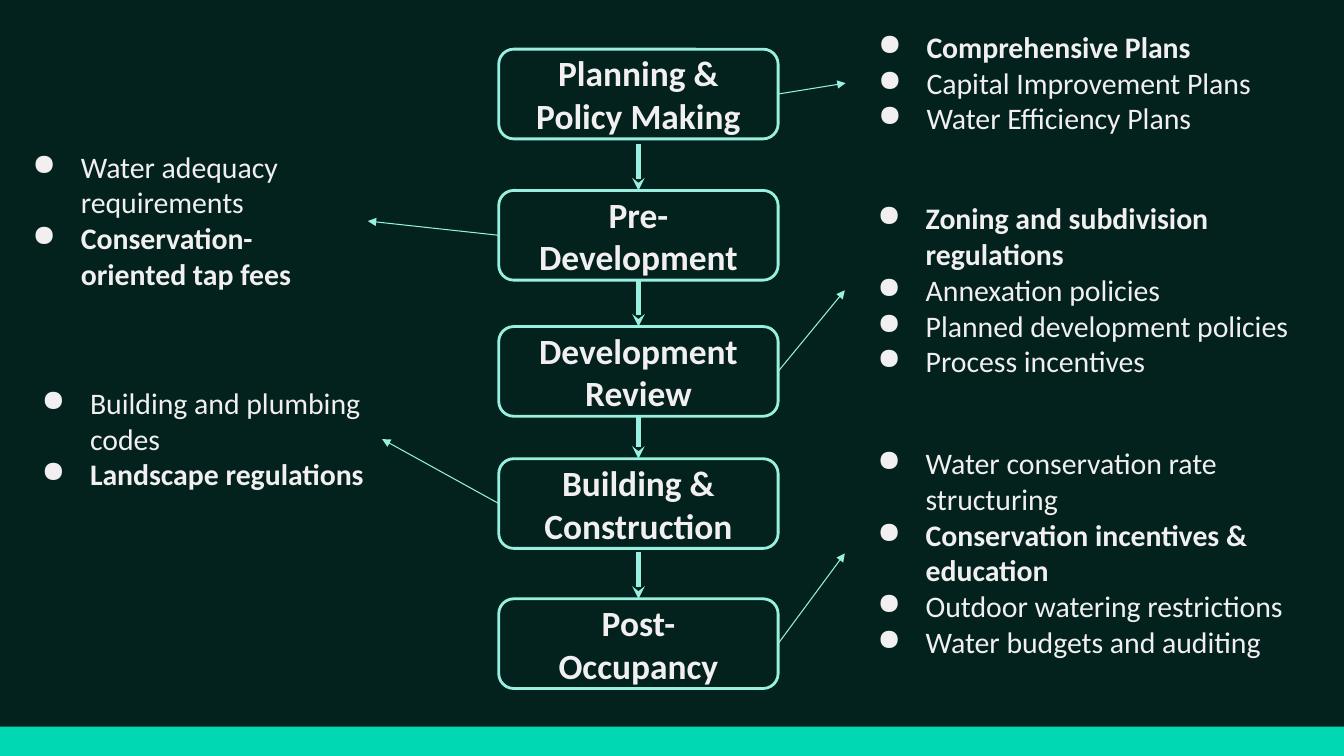
from lxml.etree import SubElement
from pptx import Presentation
from pptx.dml.color import RGBColor
from pptx.enum.shapes import MSO_CONNECTOR, MSO_SHAPE
from pptx.enum.text import MSO_ANCHOR, PP_ALIGN
from pptx.oxml.ns import qn
from pptx.util import Cm, Pt

BACKGROUND, BAR, OUTLINE, TEXT = "03221D", "00D8B4", "99F0E1", "F1EFF0"
SLIDE_WIDTH, SLIDE_HEIGHT, BAR_HEIGHT = 33.87, 19.05, 0.74
STAGE_LEFT, STAGE_WIDTH, STAGE_HEIGHT = 12.57, 7.04, 2.26
TOP, LEFT, BOTTOM, RIGHT = range(4)

# Stage: top, paragraphs, gap between its lower edge and the arrow below
STAGES = [
    (1.24, ["Planning & Policy Making"], 0.13),
    (4.80, ["Pre-", "Development"], 0),
    (8.23, ["Development Review"], 0),
    (11.56, ["Building & Construction"], 0.08),
    (15.09, ["Post-", "Occupancy"], 0),
]

# Measures of each stage: box (left, top, width, height), items (text, bold)
MEASURES = [
    ((21.31, 0.38, 11.66, 3.43), [
        ("Comprehensive Plans", True),
        ("Capital Improvement Plans", False),
        ("Water Efficiency Plans", False)]),
    ((0, 3.40, 9.27, 4.34), [
        ("Water adequacy requirements", False),
        ("Conservation-oriented tap fees", True)]),
    ((21.29, 4.70, 12.57, 5.23), [
        ("Zoning and subdivision regulations", True),
        ("Annexation policies", False),
        ("Planned development policies", False),
        ("Process incentives", False)]),
    ((0.23, 9.35, 9.40, 3.43), [
        ("Building and plumbing codes", False),
        ("Landscape regulations", True)]),
    ((21.29, 10.87, 12.57, 6.15), [
        ("Water conservation rate structuring", False),
        ("Conservation incentives & education", True),
        ("Outdoor watering restrictions", False),
        ("Water budgets and auditing", False)]),
]


def color(value):
    return RGBColor.from_string(value)


def add_run(paragraph, text, size, bold):
    run = paragraph.add_run()
    run.text = text
    run.font.name = "Calibri"
    run.font.size = Pt(size)
    run.font.bold = bold
    run.font.color.rgb = color(TEXT)


def add_paragraph(frame, index):
    return frame.add_paragraph() if index else frame.paragraphs[0]


def add_bullet(paragraph):
    properties = paragraph._p.get_or_add_pPr()
    properties.set("marL", str(Cm(1.7)))
    properties.set("indent", str(Cm(-1.22)))
    bullet_color = SubElement(properties, qn("a:buClr"))
    SubElement(bullet_color, qn("a:srgbClr"), val=TEXT)
    SubElement(properties, qn("a:buChar"), char="●")


def add_bar(slide):
    bar = slide.shapes.add_shape(
        MSO_SHAPE.RECTANGLE, 0, Cm(SLIDE_HEIGHT - BAR_HEIGHT), Cm(SLIDE_WIDTH), Cm(BAR_HEIGHT))
    bar.shadow.inherit = False
    bar.fill.solid()
    bar.fill.fore_color.rgb = color(BAR)
    bar.line.fill.background()


def add_stage(slide, top, lines):
    stage = slide.shapes.add_shape(
        MSO_SHAPE.ROUNDED_RECTANGLE, Cm(STAGE_LEFT), Cm(top), Cm(STAGE_WIDTH), Cm(STAGE_HEIGHT))
    stage.shadow.inherit = False
    stage.fill.background()
    stage.line.color.rgb = color(OUTLINE)
    stage.line.width = Pt(2)
    frame = stage.text_frame
    frame.word_wrap = True
    frame.vertical_anchor = MSO_ANCHOR.MIDDLE
    for index, line in enumerate(lines):
        paragraph = add_paragraph(frame, index)
        paragraph.alignment = PP_ALIGN.CENTER
        add_run(paragraph, line, 25.3, True)
    return stage


def add_measures(slide, box, items):
    measures = slide.shapes.add_textbox(*map(Cm, box))
    frame = measures.text_frame
    frame.word_wrap = True
    frame.margin_left = frame.margin_right = Cm(0.34)
    frame.margin_top = frame.margin_bottom = Cm(0.34)
    for index, (text, bold) in enumerate(items):
        paragraph = add_paragraph(frame, index)
        add_bullet(paragraph)
        add_run(paragraph, text, 21.3, bold)
    return measures


def add_arrow(slide, start, start_side, end, end_side, width, head, gap=0):
    """Join two shapes; with a gap, the arrow starts that far below the first."""
    arrow = slide.shapes.add_connector(
        MSO_CONNECTOR.STRAIGHT, start.left + start.width // 2,
        start.top + start.height + Cm(gap), end.left, end.top)
    if not gap:
        arrow.begin_connect(start, start_side)
    arrow.end_connect(end, end_side)
    arrow.line.color.rgb = color(OUTLINE)
    arrow.line.width = Pt(width)
    SubElement(arrow.line._get_or_add_ln(), qn("a:tailEnd"), type=head)
    SubElement(arrow._element.spPr, qn("a:effectLst"))


def build_process(slide):
    # Stages and the arrows between them
    stages = [add_stage(slide, top, lines) for top, lines, _ in STAGES]
    for stage, following, (_, _, gap) in zip(stages, stages[1:], STAGES):
        add_arrow(slide, stage, BOTTOM, following, TOP, 3, "stealth", gap)

    # Measures beside each stage
    for stage, (box, items) in zip(stages, MEASURES):
        measures = add_measures(slide, box, items)
        sides = (RIGHT, LEFT) if measures.left > stage.left else (LEFT, RIGHT)
        add_arrow(slide, stage, sides[0], measures, sides[1], 0.75, "triangle")


def main():
    presentation = Presentation()
    presentation.slide_width = Cm(SLIDE_WIDTH)
    presentation.slide_height = Cm(SLIDE_HEIGHT)
    slide = presentation.slides.add_slide(presentation.slide_layouts[6])
    slide.background.fill.solid()
    slide.background.fill.fore_color.rgb = color(BACKGROUND)
    add_bar(slide)
    build_process(slide)
    presentation.save("out.pptx")


if __name__ == "__main__":
    main()
